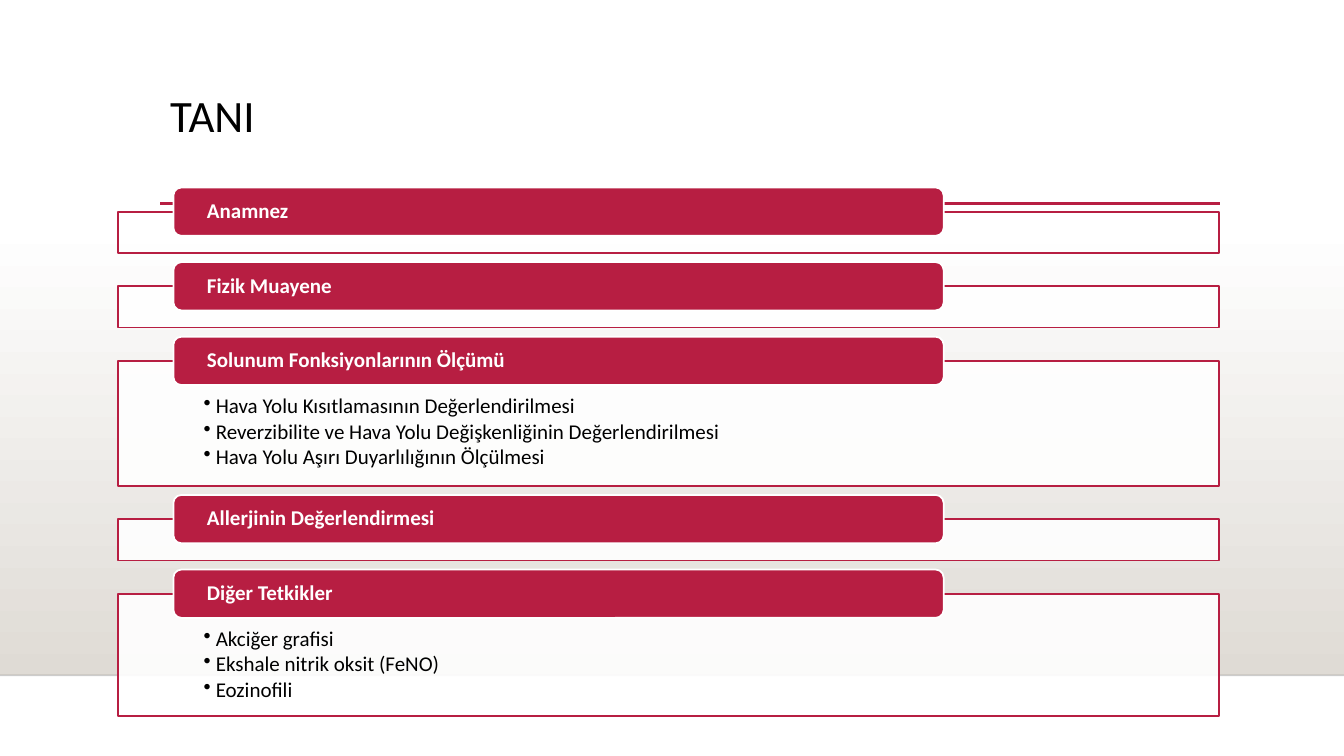
from lxml.etree import SubElement
from pptx import Presentation
from pptx.dml.color import RGBColor
from pptx.enum.shapes import MSO_CONNECTOR, MSO_SHAPE
from pptx.enum.text import MSO_ANCHOR, PP_ALIGN
from pptx.oxml.ns import qn
from pptx.util import Inches, Pt

CRIMSON = RGBColor(0xB7, 0x1E, 0x42)
WHITE = RGBColor(0xFF, 0xFF, 0xFF)
BLACK = RGBColor(0x00, 0x00, 0x00)
STONE = RGBColor(0xDF, 0xDB, 0xD5)

SECTIONS = [
    ("Anamnez", [], 0.41),
    ("Fizik Muayene", [], 0.41),
    ("Solunum Fonksiyonlarının Ölçümü", [
        "Hava Yolu Kısıtlamasının Değerlendirilmesi",
        "Reverzibilite ve Hava Yolu Değişkenliğinin Değerlendirilmesi",
        "Hava Yolu Aşırı Duyarlılığının Ölçülmesi",
    ], 1.24),
    ("Allerjinin Değerlendirmesi", [], 0.41),
    ("Diğer Tetkikler", [
        "Akciğer grafisi",
        "Ekshale nitrik oksit (FeNO)",
        "Eozinofili",
    ], 1.21),
]
GAP = 0.33
HEADER_RISE = 0.24


def write_text(shape, lines, size=15, color=BLACK, bold=False, bullet=False,
               anchor=MSO_ANCHOR.TOP, insets=(0.1, 0.05, 0.1, 0.05)):
    """Fill a shape with one paragraph per line; insets are left, top, right, bottom."""
    frame = shape.text_frame
    frame.word_wrap = True
    frame.vertical_anchor = anchor
    (frame.margin_left, frame.margin_top,
     frame.margin_right, frame.margin_bottom) = map(Inches, insets)
    for index, line in enumerate(lines):
        para = frame.paragraphs[0] if index == 0 else frame.add_paragraph()
        if bullet:
            properties = para._p.get_or_add_pPr()
            properties.set("marL", str(Inches(0.12)))
            properties.set("indent", str(Inches(-0.12)))
            SubElement(properties, qn("a:buChar"), char="•")
            para.space_after = Pt(2.25)
        para.alignment = PP_ALIGN.LEFT
        para.line_spacing = 0.9
        span = para.add_run()
        span.text = line
        span.font.name = "Calibri"
        span.font.size = Pt(size)
        span.font.bold = bold
        span.font.color.rgb = color


def set_alpha(fill_format, percent):
    """Make a solid colour partly transparent."""
    color = fill_format._xPr.find(qn("a:solidFill"))[0]
    SubElement(color, qn("a:alpha"), val=str(percent * 1000))


deck = Presentation()
deck.slide_width, deck.slide_height = Inches(13.33), Inches(7.5)
page = deck.slides.add_slide(deck.slide_layouts[6])

# Background shading and rules
shade = page.shapes.add_shape(
    MSO_SHAPE.RECTANGLE, 0, Inches(2.21), deck.slide_width, Inches(4.49))
shade.shadow.inherit = False
shade.line.fill.background()
shade.fill.gradient()
shade.fill.gradient_angle = 270
for stop, color in zip(shade.fill.gradient_stops, (WHITE, STONE)):
    stop.color.rgb = color

for left, right, y, color, width, alpha in [
    (0, 13.33, 6.7, BLACK, 1, 20),
    (1.59, 12.1, 2.02, CRIMSON, 2.5, 100),
]:
    rule = page.shapes.add_connector(
        MSO_CONNECTOR.STRAIGHT, Inches(left), Inches(y), Inches(right), Inches(y))
    rule.line.color.rgb = color
    rule.line.width = Pt(width)
    set_alpha(rule.line.fill, alpha)
    SubElement(rule._element.spPr, qn("a:effectLst"))

title = page.shapes.add_textbox(Inches(1.59), Inches(0.88), Inches(10.5), Inches(1.15))
write_text(title, ["TANI"], size=32)

# Diagnosis sections: a panel with a header over its top edge
top = 2.1
for heading, items, height in SECTIONS:
    panel = page.shapes.add_shape(
        MSO_SHAPE.RECTANGLE, Inches(1.17), Inches(top), Inches(10.92), Inches(height))
    header = page.shapes.add_shape(
        MSO_SHAPE.ROUNDED_RECTANGLE, Inches(1.72), Inches(top - HEADER_RISE),
        Inches(7.64), Inches(0.48))
    for shape, fill, line in [(panel, WHITE, CRIMSON), (header, CRIMSON, WHITE)]:
        shape.shadow.inherit = False
        shape.fill.solid()
        shape.fill.fore_color.rgb = fill
        shape.line.color.rgb = line
        shape.line.width = Pt(1.25)
    set_alpha(panel.fill, 90)
    if items:
        write_text(panel, items, bullet=True, insets=(0.85, 0.34, 0.85, 0.12))
    write_text(header, [heading], color=WHITE, bold=True,
               anchor=MSO_ANCHOR.MIDDLE, insets=(0.31, 0, 0.31, 0))
    top += height + GAP

deck.save("out.pptx")
